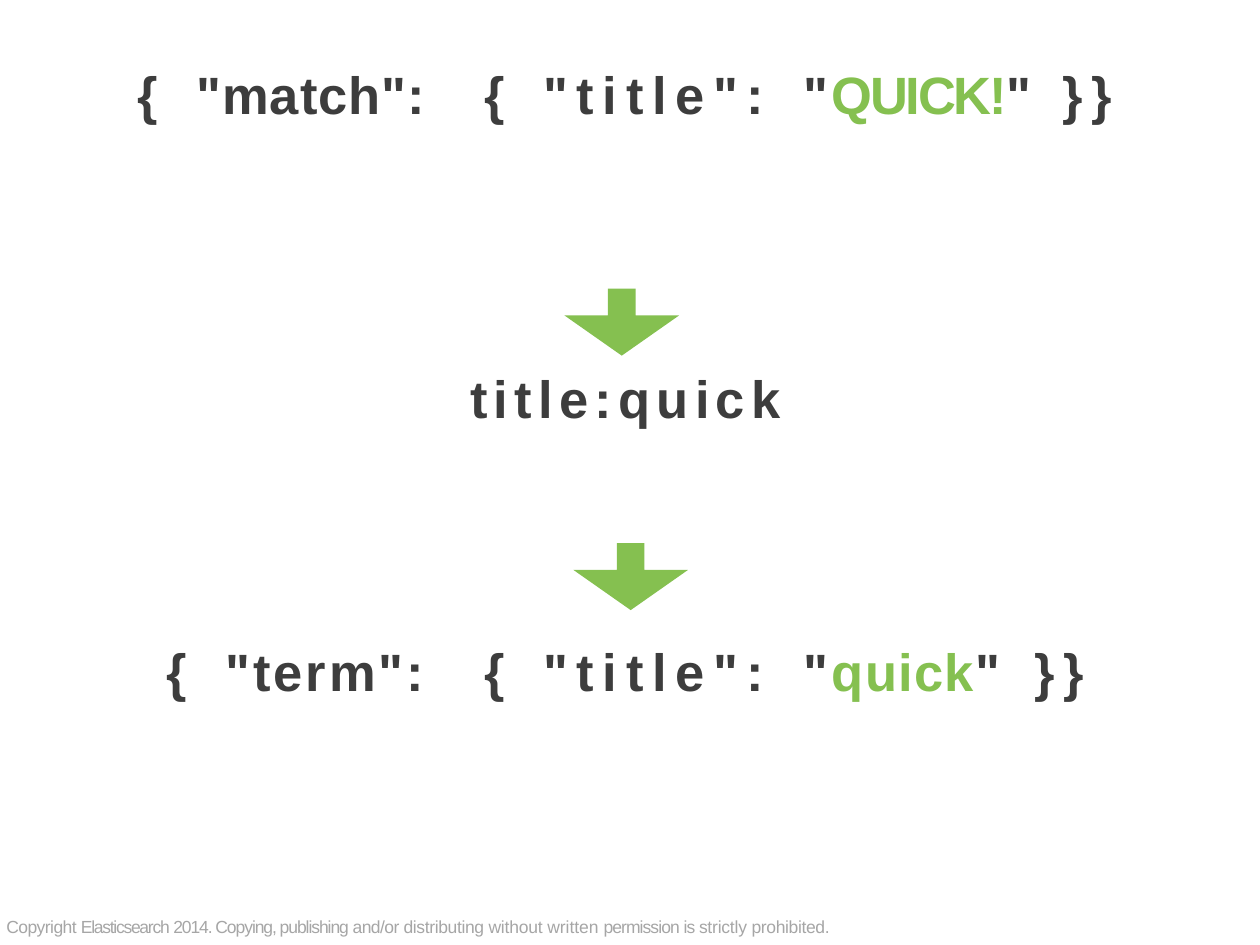
from dataclasses import dataclass

from lxml import etree
from pptx import Presentation, util as u
from pptx.dml.color import RGBColor
from pptx.enum import shapes, text
from pptx.oxml import ns


@dataclass(frozen=True)
class Theme:
    font: str = "Arial"
    dark: str = "3D3D3D"
    green: str = "85C050"
    gray: str = "A6A6A6"
    code: float = 30
    note: float = 10


class Deck:
    def __init__(self, theme, slide):
        self.theme = theme
        self.slide = slide

    def label(self, box, runs, size, color, bold=False, tabs=(), top=0.06):
        """Add one line of text; each run is (words, spacing[, color])."""
        frame = self.slide.shapes.add_textbox(*map(u.Cm, box)).text_frame
        frame.word_wrap = True
        frame.auto_size = text.MSO_AUTO_SIZE.NONE
        frame.margin_left = frame.margin_right = frame.margin_bottom = 0
        frame.margin_top = u.Cm(top)
        para = frame.paragraphs[0]
        props = para._p.get_or_add_pPr()
        props.set("marL", str(u.Cm(0.03)))
        if tabs:
            stops = etree.SubElement(props, ns.qn("a:tabLst"))
            for stop in tabs:
                etree.SubElement(stops, ns.qn("a:tab"), pos=str(u.Cm(stop)), algn="l")
        for words, gap, *tint in runs:
            run = para.add_run()
            run.text = words
            font = run.font
            font.name, font.size, font.bold = self.theme.font, u.Pt(size), bold
            font.color.rgb = RGBColor.from_string(tint[0] if tint else color)
            run._r.get_or_add_rPr().set("spc", str(round(gap * 100)))

    def code(self, box, runs, tabs=()):
        self.label(box, runs, self.theme.code, self.theme.dark, True, tabs)

    def query(self, left, top, width, kind, gap):
        self.code((left, top, width, 1.35), [("{\t", 4.8), (f'"{kind}":', gap)], [1.19])

    def clause(self, top, width, word, gap, last):
        runs = [("{\t", 4.8), ('"title":\t', 5), ('"', 2.1),
                (word, gap, self.theme.green), ('"\t', 2.2), ("}}", 4.8)]
        self.code((9.73, top, width, 1.35), runs, [1.19, 6.43, last])

    def arrow(self, left, top):
        box = map(u.Cm, (left, top, 2.31, 1.35))
        shape = self.slide.shapes.add_shape(shapes.MSO_SHAPE.DOWN_ARROW, *box)
        shape.adjustments[0] = 0.24
        shape.adjustments[1] = 0.6
        shape.shadow.inherit = False
        shape.fill.solid()
        shape.fill.fore_color.rgb = RGBColor.from_string(self.theme.green)
        shape.line.fill.background()


def main():
    show = Presentation()
    show.slide_width, show.slide_height = u.Cm(25.4), u.Cm(19.05)
    deck = Deck(Theme(), show.slides.add_slide(show.slide_layouts[6]))

    # Match query
    deck.query(2.74, 1.19, 5.89, "match", 0.6)
    deck.clause(1.19, 12.88, "QUICK!", -1.3, 11.66)

    # Analyzed term
    deck.arrow(11.38, 5.82)
    deck.code((9.45, 7.32, 6.48, 1.35), [("title:quick", 3.6)])

    # Term query
    deck.arrow(11.56, 10.95)
    deck.query(3.33, 12.83, 5.31, "term", 1.7)
    deck.clause(12.83, 12.29, "quick", 0.8, 11.1)

    # Footer
    legal = [("Copyright ", -0.3), ("Elasticsearch ", -0.7),
             ("2014. Copying, publishing ", -0.6), ("and/or ", -0.3),
             ("distributing ", -0.2), ("without ", -0.1), ("written ", 0),
             ("permission ", -0.5), ("is ", -0.6), ("strictly ", -0.1),
             ("prohibited.", -0.2)]
    deck.label((0.1, 17.17, 16.84, 1.78), legal, deck.theme.note, deck.theme.gray, top=1.3)

    show.save("out.pptx")


if __name__ == "__main__":
    main()
